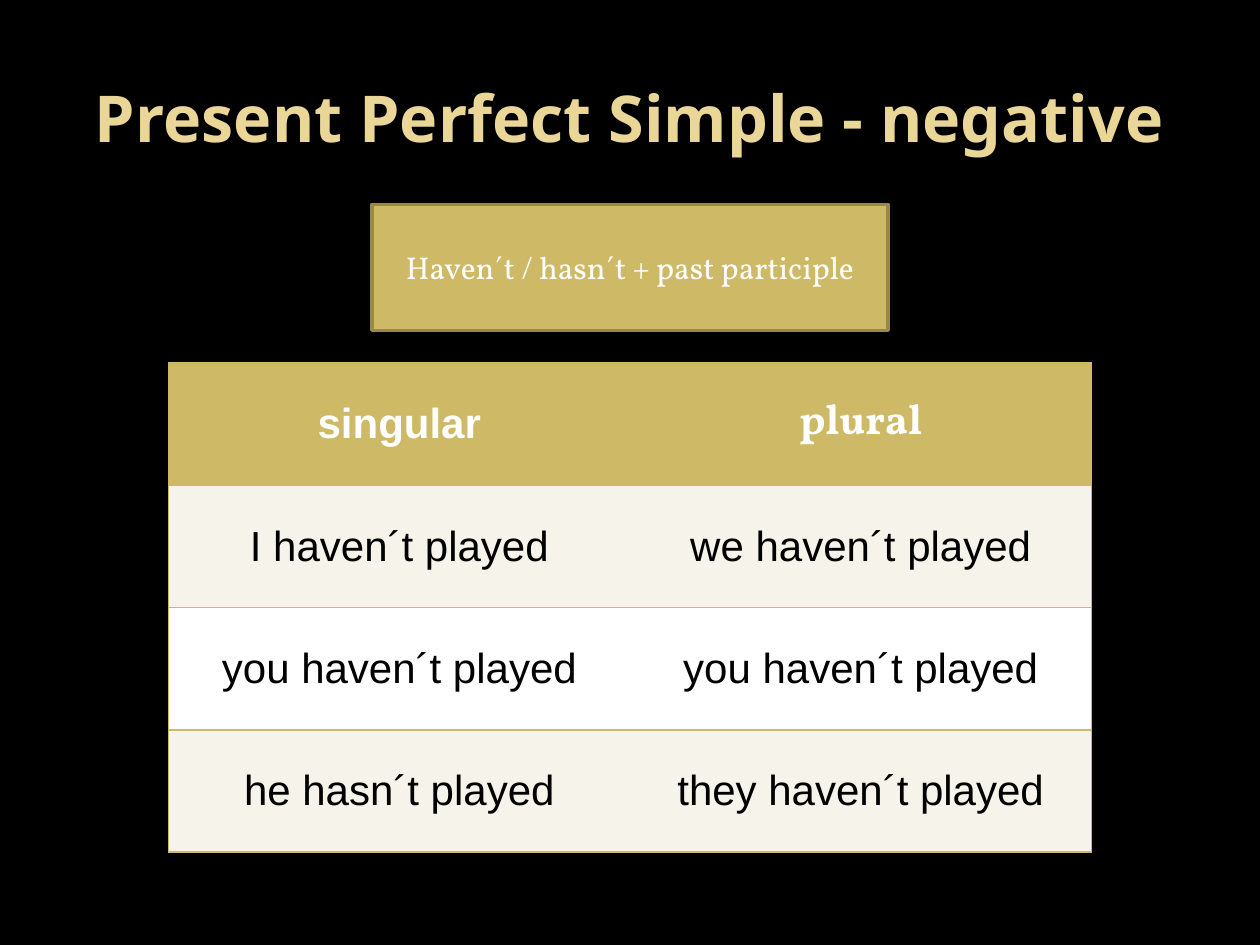
"""Build a slide on the negative form of the present perfect simple."""
from dataclasses import dataclass
from typing import Any

from lxml.etree import SubElement
from pptx import Presentation
from pptx.dml.color import RGBColor
from pptx.enum.shapes import MSO_SHAPE
from pptx.enum.text import MSO_ANCHOR, PP_ALIGN
from pptx.oxml.ns import qn
from pptx.util import Cm, Pt


@dataclass(frozen=True)
class Theme:
    backdrop: str = "000000"
    title: str = "EAD696"
    gold: str = "CEB966"
    edge: str = "98894B"
    band: str = "F6F3EA"
    light: str = "FFFFFF"
    dark: str = "000000"
    title_size: float = 36.9
    rule_size: int = 18
    cell_size: int = 24
    title_font: str = "Noto Sans"
    serif: str = "Vollkorn"
    sans: str = "Arial"


@dataclass
class SlideBuilder:
    theme: Theme
    page: Any

    def paint(self, target, color):
        target.solid()
        target.fore_color.rgb = RGBColor.from_string(color)

    def label(self, frame, text, color, **formats):
        frame.word_wrap = True
        para = frame.paragraphs[0]
        para.alignment = PP_ALIGN.CENTER
        span = para.add_run()
        span.text = text
        self.paint(span.font.fill, color)
        for name, value in formats.items():
            setattr(span.font, name, value)

    def title(self, text, *place):
        box = self.page.shapes.add_textbox(*map(Cm, place))
        box.text_frame.vertical_anchor = MSO_ANCHOR.MIDDLE
        self.label(box.text_frame, text, self.theme.title, bold=True,
                   name=self.theme.title_font, size=Pt(self.theme.title_size))

    def rule_box(self, text, *place):
        box = self.page.shapes.add_shape(MSO_SHAPE.RECTANGLE, *map(Cm, place))
        box.shadow.inherit = False
        self.paint(box.fill, self.theme.gold)
        self.paint(box.line.fill, self.theme.edge)
        box.line.width = Pt(2)
        box.text_frame.vertical_anchor = MSO_ANCHOR.MIDDLE
        self.label(box.text_frame, text, self.theme.light,
                   name=self.theme.serif, size=Pt(self.theme.rule_size))

    def borders(self, cell, hidden):
        properties = cell._tc.get_or_add_tcPr()
        for index, side in enumerate(("lnL", "lnR", "lnT", "lnB")):
            line = SubElement(properties, qn(f"a:{side}"), w=str(Pt(1)))
            if side == hidden:
                SubElement(line, qn("a:noFill"))
            else:
                fill = SubElement(line, qn("a:solidFill"))
                SubElement(fill, qn("a:srgbClr"), val=self.theme.gold)
            properties.insert(index, line)

    def table(self, rows, *place):
        theme = self.theme
        grid = self.page.shapes.add_table(len(rows), len(rows[0]), *map(Cm, place)).table
        grid.first_row = grid.horz_banding = False
        for row, texts in enumerate(rows):
            header = row == 0
            fill = theme.gold if header else (theme.light, theme.band)[row % 2]
            for column, text in enumerate(texts):
                cell = grid.cell(row, column)
                cell.vertical_anchor = MSO_ANCHOR.MIDDLE
                self.paint(cell.fill, fill)
                self.borders(cell, ("lnR", "lnL")[column])
                self.label(cell.text_frame, text, theme.light if header else theme.dark,
                           name=theme.serif if header and column else theme.sans,
                           size=Pt(theme.cell_size), bold=header)


def main():
    theme = Theme()
    deck = Presentation()
    deck.slide_width, deck.slide_height = Cm(25.4), Cm(19.05)
    page = deck.slides.add_slide(deck.slide_layouts[6])
    builder = SlideBuilder(theme, page)
    builder.paint(page.background.fill, theme.backdrop)
    builder.title("Present Perfect Simple - negative", 1.27, 0.76, 22.86, 3.18)
    builder.table([
        ("singular", "plural"),
        ("I haven´t played", "we haven´t played"),
        ("you haven´t played", "you haven´t played"),
        ("he hasn´t played", "they haven´t played"),
    ], 3.4, 7.32, 18.6, 9.86)
    builder.rule_box("Haven´t / hasn´t + past participle", 7.5, 4.12, 10.4, 2.54)
    deck.save("out.pptx")


if __name__ == "__main__":
    main()
